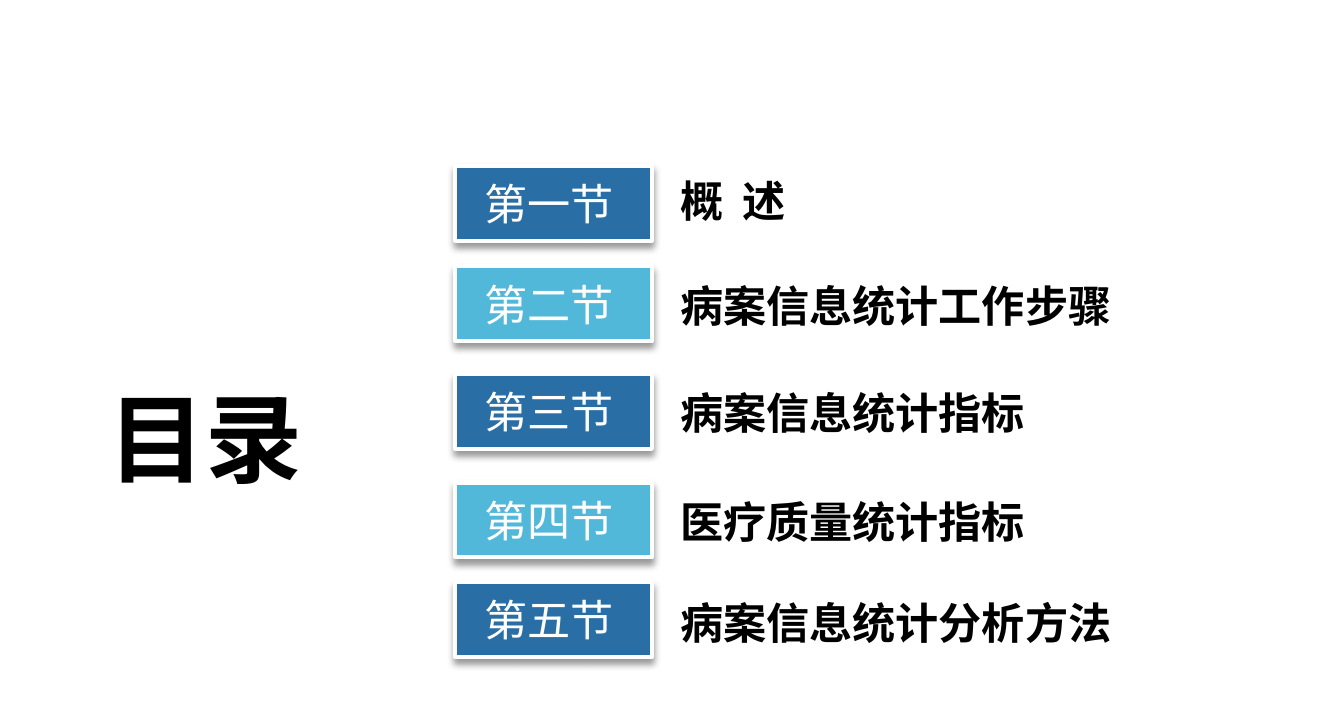
from lxml import etree
from pptx import Presentation
from pptx.dml.color import RGBColor
from pptx.enum.shapes import MSO_SHAPE
from pptx.enum.text import MSO_ANCHOR, MSO_AUTO_SIZE, PP_ALIGN
from pptx.oxml import parse_xml
from pptx.oxml.ns import nsdecls, qn
from pptx.util import Inches, Pt

CJK_FONT = "Noto Sans CJK SC"
DARK_BLUE, LIGHT_BLUE = "296FA5", "52B8DA"
WHITE, BLACK = "FFFFFF", "000000"

SHADOW = (
    f'<a:effectLst {nsdecls("a")}>'
    '<a:outerShdw blurRad="50800" dist="38100" dir="5400000" rotWithShape="0">'
    '<a:srgbClr val="000000"><a:alpha val="40000"/></a:srgbClr>'
    '</a:outerShdw></a:effectLst>'
)

# label, title, top of the label box, top and width of the title
SECTIONS = [
    ("第一节 ", "概  述", 1.28, 1.3, 3.3),
    ("第二节 ", "病案信息统计工作步骤", 2.06, 2.11, 3.7),
    ("第三节 ", "病案信息统计指标", 2.89, 2.94, 3.3),
    ("第四节 ", "医疗质量统计指标", 3.73, 3.78, 3.3),
    ("第五节 ", "病案信息统计分析方法", 4.5, 4.56, 3.96),
]


def color(value):
    return RGBColor.from_string(value)


def write(shape, text, size, font, fill, bold=False):
    """Set the shape's text and its Latin and East Asian fonts."""
    shape.text_frame.text = text
    span = shape.text_frame.paragraphs[0].runs[0]
    span.font.size = Pt(size)
    span.font.bold = bold
    span.font.color.rgb = color(fill)
    span.font.name = font
    east_asian = etree.Element(qn("a:ea"), typeface=CJK_FONT)
    span.font._element.find(qn("a:latin")).addnext(east_asian)


deck = Presentation()
deck.slide_width, deck.slide_height = Inches(10.39), Inches(5.62)
page = deck.slides.add_slide(deck.slide_layouts[6])
page.background.fill.solid()
page.background.fill.fore_color.rgb = color(WHITE)

heading = page.shapes.add_textbox(Inches(0.74), Inches(2.88), Inches(1.79), Inches(1.01))
heading.text_frame.word_wrap = False
heading.text_frame.auto_size = MSO_AUTO_SIZE.SHAPE_TO_FIT_TEXT
write(heading, "目录", 54, CJK_FONT, BLACK, bold=True)

for index, (label, title, label_top, title_top, title_width) in enumerate(SECTIONS):
    box = page.shapes.add_shape(
        MSO_SHAPE.RECTANGLE, Inches(3.52), Inches(label_top), Inches(1.52), Inches(0.58))
    box.fill.solid()
    box.fill.fore_color.rgb = color(LIGHT_BLUE if index % 2 else DARK_BLUE)
    box.line.color.rgb = color(WHITE)
    box.line.width = Pt(2.25)
    box._element.spPr.append(parse_xml(SHADOW))
    write(box, label, 24, "Times New Roman", WHITE)
    box.text_frame.vertical_anchor = MSO_ANCHOR.MIDDLE
    box.text_frame.paragraphs[0].alignment = PP_ALIGN.CENTER

    title_box = page.shapes.add_textbox(
        Inches(5.16), Inches(title_top), Inches(title_width), Inches(0.5))
    title_box.text_frame.word_wrap = True
    title_box.text_frame.auto_size = MSO_AUTO_SIZE.SHAPE_TO_FIT_TEXT
    write(title_box, title, 24, "Times New Roman", BLACK, bold=True)

deck.save("out.pptx")
